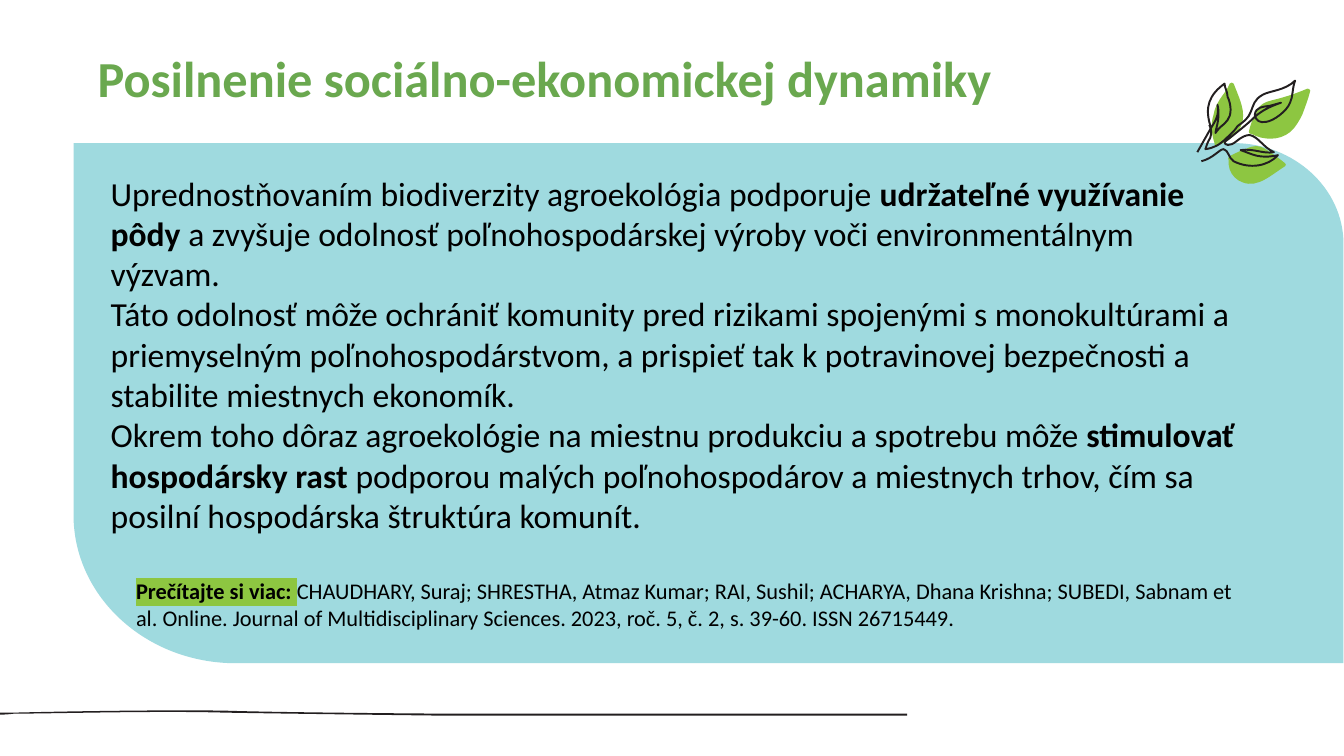
from dataclasses import dataclass

from lxml.etree import SubElement
from pptx import Presentation
from pptx.dml.color import RGBColor as RGB
from pptx.oxml.ns import qn
from pptx.util import Cm, Pt


@dataclass(frozen=True)
class Theme:
    font: str = "Calibri"
    title_size: int = 36
    body_size: int = 24
    source_size: int = 16
    title: str = "6AA84F"
    text: str = "000000"
    panel: str = "9FDADF"
    leaf: str = "8DC641"
    ink: str = "231F20"


theme = Theme()
INCH = Cm(2.54)


def add_text(p, text, size=theme.body_size, color=theme.text, bold=False, highlight=None):
    r = p.add_run()
    r.text = text
    r.font.size, r.font.bold = Pt(size), bold
    r.font.color.rgb = RGB.from_string(color)
    if highlight:
        mark = SubElement(r.font._element, qn("a:highlight"))
        SubElement(mark, qn("a:srgbClr"), val=highlight)
    r.font.name = theme.font


def draw_path(shapes, contours, fill=None, line=None, width=1):
    """Contours in inches: a start, then lines (two numbers) or Bézier curves (six)."""
    builder = shapes.build_freeform(*(v * INCH for v in contours[0][0]))
    for i, (start, *segments) in enumerate(contours):
        if i:
            builder.move_to(*(v * INCH for v in start))
        ends = [(seg[-2] * INCH, seg[-1] * INCH) for seg in segments]
        builder.add_line_segments(ends, close=bool(fill))
    sp = builder.convert_to_shape()
    sp.shadow.inherit = False

    # Turn the straight segments with control points into curves
    all_segments = [seg for contour in contours for seg in contour[1:]]
    for node, seg in zip(list(sp._element.iter(qn("a:lnTo"))), all_segments):
        if len(seg) == 6:
            curve = node.makeelement(qn("a:cubicBezTo"))
            for x, y in zip(seg[::2], seg[1::2]):
                SubElement(curve, qn("a:pt"), x=str(round(x * INCH) - sp.left),
                           y=str(round(y * INCH) - sp.top))
            node.getparent().replace(node, curve)

    if fill:
        sp.fill.solid()
        sp.fill.fore_color.rgb = RGB.from_string(fill)
    else:
        sp.fill.background()
    if line:
        sp.line.color.rgb = RGB.from_string(line)
        sp.line.width = Pt(width)
    else:
        sp.line.fill.background()


prs = Presentation()
prs.slide_width, prs.slide_height = Cm(33.87), Cm(19.05)
s = prs.slides.add_slide(prs.slide_layouts[6])

# Footer line and panel with two rounded corners
draw_path(s.shapes, [[
    (9, 7.1), (4.43, 7.1), (4.41, 7.1, 2.8, 7.08, 2.23, 7.07),
    (1.55, 7.05, 0.52, 7.08, 0.14, 7.08), (0.06, 7.09, 0.01, 7.09, 0, 7.09), (0, 7.07),
    (0.01, 7.07, 0.06, 7.07, 0.14, 7.07), (0.52, 7.06, 1.55, 7.04, 2.23, 7.05),
    (2.81, 7.07, 4.41, 7.08, 4.43, 7.08), (9, 7.08),
]], fill=theme.ink)
draw_path(s.shapes, [[
    (0.73, 1.42), (12.24, 1.42), (12.84, 1.42, 13.33, 1.87, 13.33, 2.42), (13.33, 6.58),
    (2.34, 6.58), (1.45, 6.58, 0.73, 5.92, 0.73, 5.11),
]], fill=theme.panel)

# Body text and title
body = [
    [("Uprednostňovaním biodiverzity agroekológia podporuje ", {}),
     ("udržateľné využívanie pôdy ", {"bold": True}),
     ("a zvyšuje odolnosť poľnohospodárskej výroby voči environmentálnym výzvam.", {})],
    [("Táto odolnosť môže ochrániť komunity pred rizikami spojenými s monokultúrami a "
      "priemyselným poľnohospodárstvom, a prispieť tak k potravinovej bezpečnosti a "
      "stabilite miestnych ekonomík.", {})],
    [("Okrem toho dôraz agroekológie na miestnu produkciu a spotrebu môže ", {}),
     ("stimulovať hospodársky rast ", {"bold": True}),
     ("podporou malých poľnohospodárov a miestnych trhov, čím sa posilní hospodárska "
      "štruktúra komunít.", {})],
    [("Prečítajte si viac: ",
      {"size": theme.source_size, "bold": True, "highlight": theme.leaf}),
     ("CHAUDHARY, Suraj; SHRESTHA, Atmaz Kumar; RAI, Sushil; ACHARYA, Dhana Krishna; "
      "SUBEDI, Sabnam et al. Online. Journal of Multidisciplinary Sciences. 2023, roč. 5, "
      "č. 2, s. 39-60. ISSN 26715449.", {"size": theme.source_size})],
]
title = [[("Posilnenie sociálno-ekonomickej dynamiky",
           {"size": theme.title_size, "color": theme.title, "bold": True})]]
text_boxes = [
    ((2.54, 4.22, 29.11, 11.71), 1.0, body),
    ((2.21, 1.24, 29.44, 2.24), 0.9, title),
]
for box, spacing, paragraphs in text_boxes:
    tf = s.shapes.add_textbox(*map(Cm, box)).text_frame
    tf.word_wrap = True
    for i, runs in enumerate(paragraphs):
        p = tf.paragraphs[0] if i == 0 else tf.add_paragraph()
        p.line_spacing = spacing
        for text, style in runs:
            add_text(p, text, **style)

# The reference is indented and set apart from the body
source = s.shapes[2].text_frame.paragraphs[-1]
source.space_before = Pt(30)
source._p.get_or_add_pPr().set("marL", str(Cm(0.64)))

# Leaf ornament: green blades, then ink strokes
ornament = s.shapes.add_group_shape().shapes
blades = [
    [(12.11, 1.43),
     (12.21, 1.39, 12.31, 1.31, 12.33, 1.19), (12.35, 1.07, 12.28, 0.94, 12.24, 0.83),
     (12.23, 0.81, 12.21, 0.82, 12.2, 0.83), (12.18, 0.89, 12.13, 0.94, 12.1, 0.99),
     (12.07, 1.04, 12.05, 1.08, 12.04, 1.14), (12.01, 1.23, 12.02, 1.33, 12.05, 1.42),
     (12.04, 1.43, 12.06, 1.45, 12.07, 1.45)],
    [(12.8, 1.31),
     (12.85, 1.27, 12.89, 1.2, 12.92, 1.14), (12.95, 1.06, 12.98, 0.98, 13, 0.9),
     (13, 0.89, 12.98, 0.87, 12.97, 0.88), (12.9, 0.91, 12.82, 0.94, 12.75, 0.96),
     (12.69, 0.98, 12.63, 0.99, 12.57, 1.01), (12.51, 1.03, 12.48, 1.07, 12.46, 1.13),
     (12.43, 1.18, 12.4, 1.25, 12.39, 1.31), (12.39, 1.32, 12.4, 1.33, 12.42, 1.33),
     (12.53, 1.39, 12.69, 1.4, 12.8, 1.31)],
    [(12.75, 1.65),
     (12.76, 1.64, 12.76, 1.63, 12.75, 1.62), (12.7, 1.58, 12.65, 1.54, 12.6, 1.51),
     (12.56, 1.48, 12.52, 1.45, 12.47, 1.45), (12.43, 1.45, 12.39, 1.46, 12.36, 1.48),
     (12.32, 1.49, 12.28, 1.51, 12.24, 1.53), (12.17, 1.56, 12.18, 1.58, 12.19, 1.59),
     (12.19, 1.62, 12.19, 1.65, 12.2, 1.68), (12.22, 1.74, 12.27, 1.79, 12.33, 1.81),
     (12.48, 1.87, 12.62, 1.73, 12.75, 1.65)],
]
for blade in blades:
    draw_path(ornament, [blade], fill=theme.leaf)

left_leaf = [
    (12.01, 1.25),
    (11.95, 1.06, 12, 0.94, 12.15, 0.83), (12.15, 0.87, 12.18, 0.91, 12.18, 0.96),
    (12.2, 1, 12.21, 1.05, 12.21, 1.09), (12.21, 1.18, 12.16, 1.22, 12.11, 1.26),
    (12.1, 1.27, 12.08, 1.29, 12.06, 1.32), (12.06, 1.29, 12.07, 1.28, 12.07, 1.27),
    (12.09, 1.19, 12.1, 1.12, 12.08, 1.04), (12.1, 1.14, 12.06, 1.2, 12.01, 1.28),
    (11.97, 1.35, 11.92, 1.44, 11.88, 1.51)]
right_leaf = [
    (12, 1.24),
    (12.03, 1.3, 12.02, 1.36, 11.99, 1.4), (11.97, 1.44, 11.97, 1.46, 11.96, 1.48),
    (12.04, 1.47, 12.1, 1.44, 12.17, 1.37), (12.2, 1.34, 12.25, 1.3, 12.28, 1.25),
    (12.34, 1.21, 12.39, 1.17, 12.41, 1.11), (12.44, 1.04, 12.44, 0.99, 12.53, 0.94),
    (12.6, 0.9, 12.75, 0.9, 12.85, 0.8), (12.82, 0.88, 12.83, 0.96, 12.8, 1.02),
    (12.77, 1.1, 12.64, 1.2, 12.56, 1.21), (12.5, 1.22, 12.46, 1.2, 12.45, 1.14),
    (12.46, 1.06, 12.53, 1.06, 12.6, 1.05), (12.64, 1.04, 12.67, 1.03, 12.71, 1.02),
    (12.59, 1.06, 12.52, 1.1, 12.45, 1.16), (12.37, 1.24, 12.25, 1.33, 12.15, 1.41)]
lower_leaf = [
    (12.15, 1.41),
    (12.15, 1.44, 12.2, 1.46, 12.27, 1.4), (12.32, 1.36, 12.36, 1.34, 12.4, 1.34),
    (12.49, 1.36, 12.53, 1.46, 12.64, 1.51), (12.53, 1.53, 12.44, 1.47, 12.31, 1.49),
    (12.43, 1.53, 12.49, 1.58, 12.68, 1.54), (12.58, 1.65, 12.4, 1.68, 12.24, 1.6),
    (12.19, 1.57, 12.19, 1.49, 12.14, 1.48), (12.1, 1.48, 12.04, 1.57, 11.92, 1.6)]
draw_path(ornament, [left_leaf, right_leaf, lower_leaf], line=theme.ink, width=1.4)

prs.save("out.pptx")
